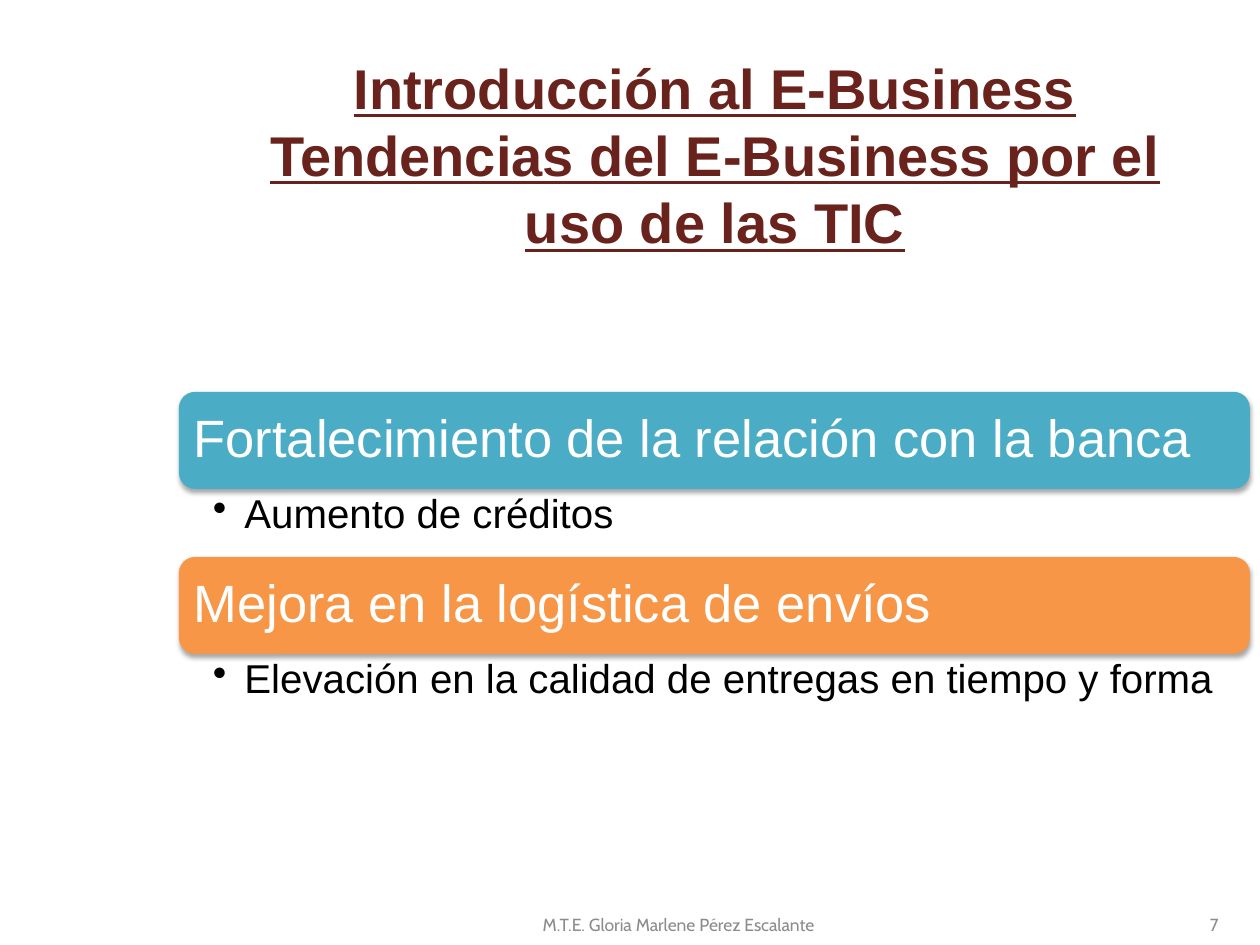
from lxml import etree
from pptx import Presentation
from pptx.dml.color import RGBColor
from pptx.enum import shapes, text
from pptx.oxml import ns
from pptx.util import Inches, Pt

MAROON = RGBColor(0x6A, 0x22, 0x1D)
GRAY = RGBColor(0x8C, 0x8C, 0x8C)
TEAL = RGBColor(0x4B, 0xAC, 0xC6)
ORANGE = RGBColor(0xF7, 0x96, 0x46)
WHITE = RGBColor(0xFF, 0xFF, 0xFF)
BLACK = RGBColor(0, 0, 0)
MIDDLE = text.MSO_ANCHOR.MIDDLE
TOP = text.MSO_ANCHOR.TOP
LEFT, CENTER, RIGHT = text.PP_ALIGN.LEFT, text.PP_ALIGN.CENTER, text.PP_ALIGN.RIGHT


def setup(shape, anchor, align, pads):
    frame = shape.text_frame
    frame.word_wrap = True
    frame.vertical_anchor = anchor
    frame.margin_left, frame.margin_top, frame.margin_right, frame.margin_bottom = map(Inches, pads)
    para = frame.paragraphs[0]
    para.alignment = align
    return para


def write(para, words, size, color, face="Arial"):
    run = para.add_run()
    run.text = words
    run.font.name = face
    run.font.size = Pt(size)
    run.font.color.rgb = color
    return run


deck = Presentation()
deck.slide_width = Inches(10)
deck.slide_height = Inches(7.5)
slide = deck.slides.add_slide(deck.slide_layouts[6])
items = slide.shapes
PADS = (0.1, 0.05, 0.1, 0.05)

title = items.add_textbox(Inches(1.85), Inches(0.6), Inches(7.65), Inches(1.25))
para = setup(title, MIDDLE, CENTER, PADS)
lines = ["Introducción al E-Business", "Tendencias del E-Business por el uso de las TIC"]
for i, line in enumerate(lines):
    if i:
        para.add_line_break()
    run = write(para, line, 32, MAROON)
    run.font.bold = True
    run.font.underline = True

feet = [
    (3.8, 3.17, CENTER, "M.T.E. Gloria Marlene Pérez Escalante"),
    (7.44, 2.33, RIGHT, "7"),
]
for left, width, align, words in feet:
    foot = items.add_textbox(Inches(left), Inches(7.14), Inches(width), Inches(0.4))
    write(setup(foot, MIDDLE, align, PADS), words, 10, GRAY, "Cabin")

trends = [
    (TEAL, "Fortalecimiento de la relación con la banca", "Aumento de créditos"),
    (ORANGE, "Mejora en la logística de envíos", "Elevación en la calidad de entregas en tiempo y forma"),
]
left, width = Inches(1.42), Inches(8.5)
high, low = Inches(0.77), Inches(0.54)
for i, (color, head, point) in enumerate(trends):
    top = Inches(3.11) + i * (high + low)
    bar = items.add_shape(shapes.MSO_SHAPE.ROUNDED_RECTANGLE, left, top, width, high)
    bar.fill.solid()
    bar.fill.fore_color.rgb = color
    bar.line.fill.background()
    bar.shadow.inherit = False
    glow = bar.element.spPr.find(ns.qn("a:effectLst"))
    shade = etree.SubElement(glow, ns.qn("a:outerShdw"), blurRad=str(Pt(3.1)),
                             dist=str(Pt(1.8)), dir="5400000", rotWithShape="0")
    tint = etree.SubElement(shade, ns.qn("a:srgbClr"), val="000000")
    etree.SubElement(tint, ns.qn("a:alpha"), val="35000")
    para = setup(bar, MIDDLE, LEFT, (0.08, 0.08, 0.08, 0.08))
    para.line_spacing = 0.9
    write(para, head, 30, WHITE)

    note = items.add_textbox(left, top + high, width, low)
    para = setup(note, TOP, LEFT, (0.27, 0.04, 0.23, 0.04))
    props = para._p.get_or_add_pPr()
    props.set("marL", str(Inches(0.25)))
    props.set("indent", str(-Inches(0.25)))
    etree.SubElement(props, ns.qn("a:buChar"), char="•")
    para.line_spacing = 0.9
    write(para, point, 23, BLACK)

deck.save("out.pptx")
